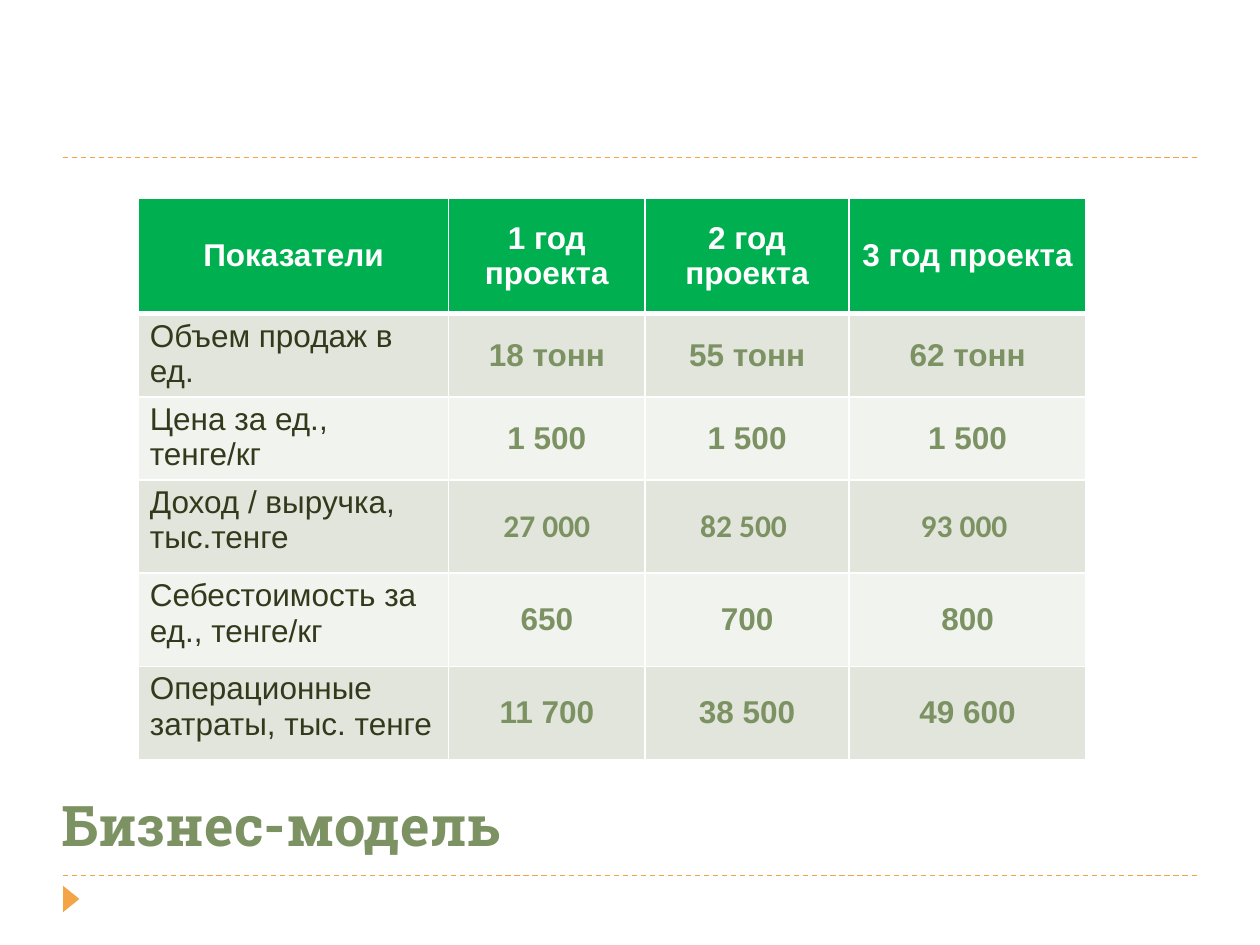
from lxml.etree import SubElement
from pptx import Presentation
from pptx.dml.color import RGBColor
from pptx.enum.dml import MSO_LINE
from pptx.enum.shapes import MSO_CONNECTOR, MSO_SHAPE
from pptx.enum.text import MSO_ANCHOR as ANCHOR, PP_ALIGN as ALIGN
from pptx.oxml.ns import qn
from pptx.util import Inches, Pt

WHITE = RGBColor(0xFF, 0xFF, 0xFF)
ORANGE = RGBColor(0xF3, 0xA4, 0x47)
GREEN = RGBColor(0x00, 0xB0, 0x50)
SAGE = RGBColor(0x7D, 0x92, 0x63)
OLIVE = RGBColor(0x33, 0x3A, 0x1C)
BANDS = (RGBColor(0xE1, 0xE5, 0xDC), RGBColor(0xF0, 0xF3, 0xEE))

COLUMNS = (2.46, 1.56, 1.62, 1.88)
ROWS = (0.92, 0.66, 0.66, 0.74, 0.74, 0.74)
REVENUE_ROW = 3
DATA = (
    ("Показатели", "1 год проекта", "2 год проекта", "3 год проекта"),
    ("Объем продаж в ед.", "18 тонн", "55 тонн", "62 тонн"),
    ("Цена за ед., тенге/кг", "1 500", "1 500", "1 500"),
    ("Доход / выручка, тыс.тенге", "27 000", "82 500 ", "93 000 "),
    ("Себестоимость за ед., тенге/кг", "650", "700", "800"),
    ("Операционные затраты, тыс. тенге", "11 700", "38 500", "49 600"),
)


def write(tf, text, size=18, font="Arial", color=SAGE, bold=True, align=ALIGN.CENTER):
    """Put one formatted run into a text frame."""
    p = tf.paragraphs[0]
    p.alignment = align
    r = p.add_run()
    r.text = text
    r.font.size = Pt(size)
    r.font.name = font
    r.font.bold = bold
    r.font.color.rgb = color


def add_title(s, text):
    """Move the title placeholder to the foot of the slide and fill it."""
    sp = s.shapes.title
    sp.left, sp.top, sp.width, sp.height = map(Inches, (0.39, 6.02, 8.95, 0.84))
    sp.text_frame.word_wrap = True
    sp.text_frame.vertical_anchor = ANCHOR.BOTTOM
    write(sp.text_frame, text, size=32, font="Roboto Slab", align=ALIGN.LEFT)


def add_rule(s, y):
    """Draw a dashed rule between the side margins."""
    line = s.shapes.add_connector(
        MSO_CONNECTOR.STRAIGHT, Inches(0.5), Inches(y), Inches(9.5), Inches(y))
    line.line.color.rgb = ORANGE
    line.line.width = Pt(0.75)
    line.line.dash_style = MSO_LINE.DASH
    SubElement(line._element.spPr, qn("a:effectLst"))


def add_marker(s):
    """Draw the triangle that points right below the lower rule."""
    sp = s.shapes.add_shape(
        MSO_SHAPE.ISOSCELES_TRIANGLE, *map(Inches, (0.46, 7.07, 0.21, 0.13)))
    sp.rotation = 90
    sp.shadow.inherit = False
    sp.fill.solid()
    sp.fill.fore_color.rgb = ORANGE
    sp.line.fill.background()


def set_borders(cell, **widths):
    """Give a cell white borders of the given widths in points."""
    tc_pr = cell._tc.get_or_add_tcPr()
    for side, width in widths.items():
        ln = SubElement(tc_pr, qn(f"a:ln{side}"), w=str(Pt(width)))
        SubElement(SubElement(ln, qn("a:solidFill")), qn("a:srgbClr"), val=str(WHITE))


def format_cell(cell, row, col, text):
    """Style a cell by its place in the table."""
    header, label = row == 0, row > 0 and col == 0
    set_borders(cell, L=1, R=1, T=3 if row == 1 else 1, B=3 if header else 1)
    cell.fill.solid()
    cell.fill.fore_color.rgb = GREEN if header else BANDS[(row - 1) % 2]
    cell.margin_left = cell.margin_right = Inches(0.09)
    cell.margin_top = cell.margin_bottom = Inches(0.04)
    cell.vertical_anchor = ANCHOR.TOP if label else ANCHOR.MIDDLE
    if label:
        write(cell.text_frame, text, color=OLIVE, bold=False, align=ALIGN.LEFT)
    else:
        write(cell.text_frame, text, color=WHITE if header else SAGE,
              font="Calibri" if row == REVENUE_ROW else "Arial")


def add_figures(s):
    """Add the table of yearly figures."""
    table = s.shapes.add_table(
        len(ROWS), len(COLUMNS), Inches(1.1), Inches(1.57),
        Inches(sum(COLUMNS)), Inches(sum(ROWS))).table
    for column, width in zip(table.columns, COLUMNS):
        column.width = Inches(width)
    for i, (height, texts) in enumerate(zip(ROWS, DATA)):
        table.rows[i].height = Inches(height)
        for j, text in enumerate(texts):
            format_cell(table.cell(i, j), i, j, text)


def main():
    """Build the business model slide."""
    prs = Presentation()
    prs.slide_width, prs.slide_height = Inches(10), Inches(7.5)
    s = prs.slides.add_slide(prs.slide_layouts[5])
    for y in (6.95, 1.25):
        add_rule(s, y)
    add_marker(s)
    add_title(s, "Бизнес-модель")
    add_figures(s)
    prs.save("out.pptx")


if __name__ == "__main__":
    main()
